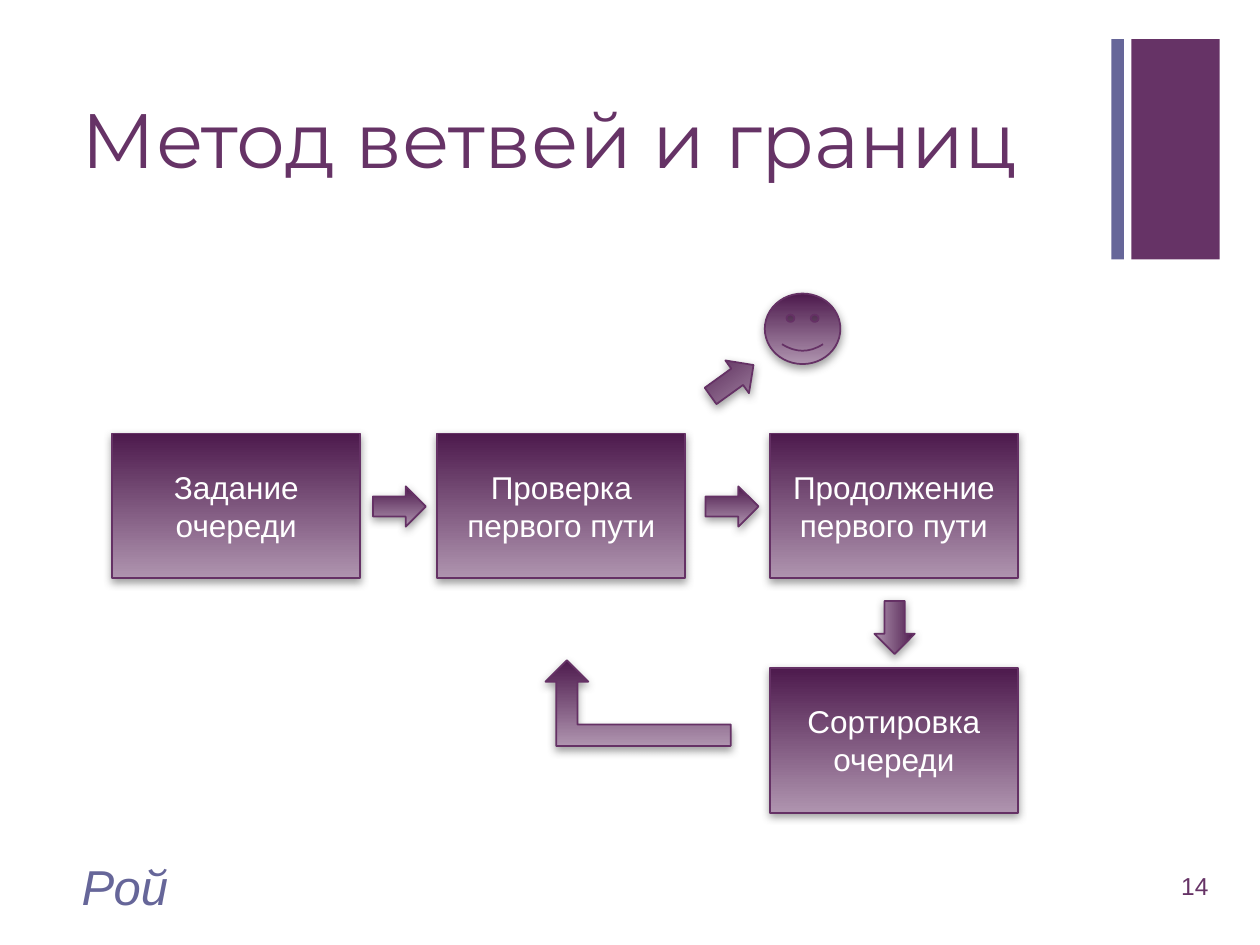
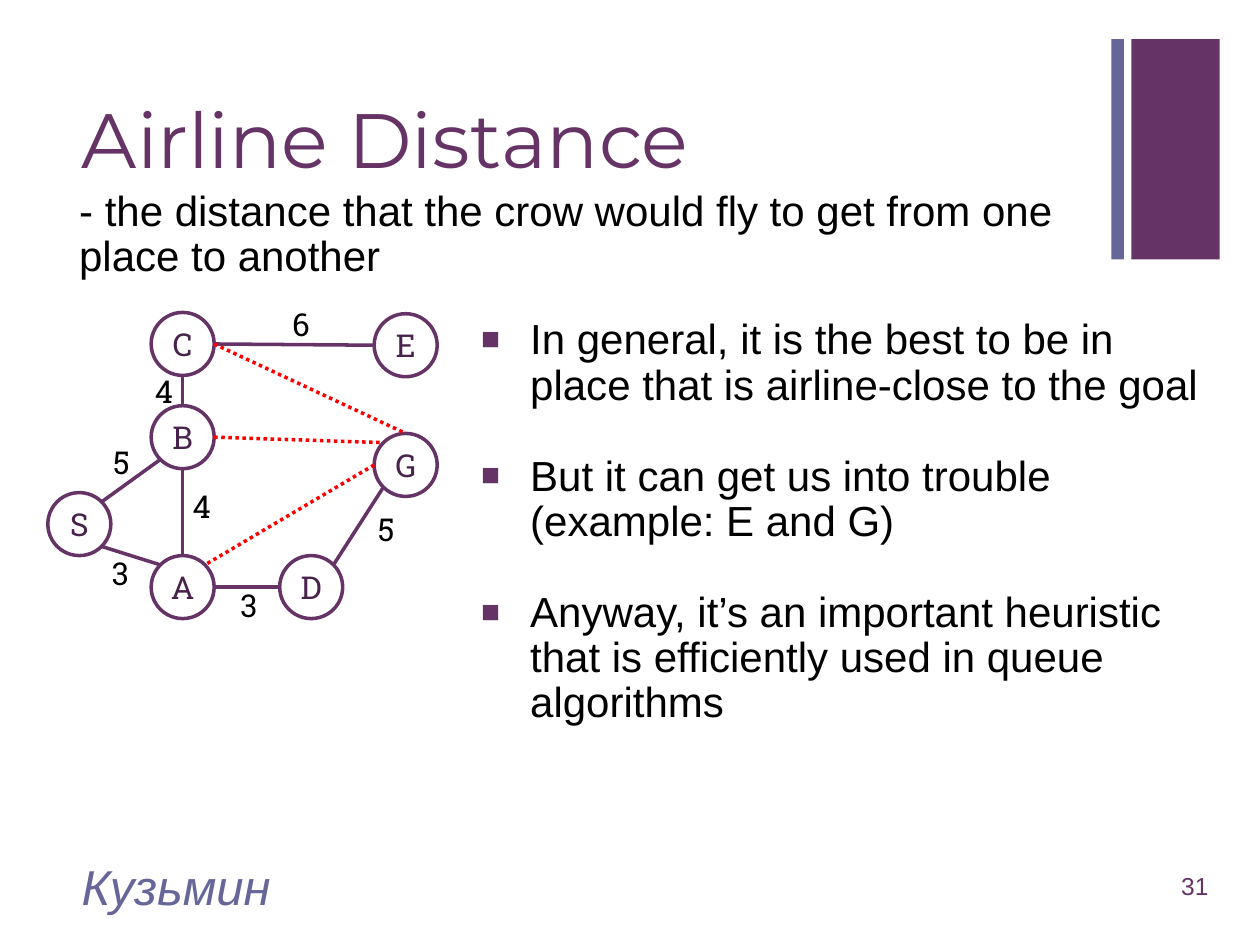
import math

import pptx
import pptx.dml.color
import pptx.enum.dml
import pptx.enum.shapes
import pptx.enum.text
import pptx.oxml
import pptx.oxml.ns
import pptx.util

Inches, Pt = pptx.util.Inches, pptx.util.Pt
RGBColor = pptx.dml.color.RGBColor
SHAPE = pptx.enum.shapes.MSO_SHAPE
ALIGN = pptx.enum.text.PP_ALIGN
ANCHOR = pptx.enum.text.MSO_ANCHOR
DOTTED = pptx.enum.dml.MSO_LINE.ROUND_DOT
qn = pptx.oxml.ns.qn

PURPLE = RGBColor(0x66, 0x33, 0x66)
SLATE = RGBColor(0x66, 0x66, 0x99)
GRADIENT_TOP = RGBColor(0x4D, 0x1A, 0x4D)
GRADIENT_BOTTOM = RGBColor(0xAF, 0x94, 0xAF)
OUTLINE = RGBColor(0x65, 0x31, 0x65)
NODE_TEXT = RGBColor(0x48, 0x22, 0x4C)
WHITE = RGBColor(0xFF, 0xFF, 0xFF)
BLACK = RGBColor(0, 0, 0)
RED = RGBColor(0xFF, 0, 0)

BODY_FONT, TITLE_FONT, GRAPH_FONT = "Arial", "Montserrat", "Roboto Slab"

BOX_SIZE = (1.97, 1.15)
ARROW_SIZE = (0.42, 0.32)
NODE_DIAMETER = 0.5

NODES = {
    "C": (1.2, 2.48), "E": (2.97, 2.49), "B": (1.2, 3.22), "S": (0.38, 3.91),
    "A": (1.2, 4.41), "D": (2.22, 4.41), "G": (2.97, 3.44),
}
# Directions on a node's rim, in degrees clockwise from the right
RIGHT, LOWER_RIGHT, BOTTOM, LOWER_LEFT, LEFT, UPPER_LEFT, TOP, UPPER_RIGHT = range(0, 360, 45)
ROADS = [
    ("E", LEFT, "C", RIGHT), ("C", BOTTOM, "B", TOP),
    ("B", LOWER_LEFT, "S", UPPER_RIGHT), ("S", LOWER_RIGHT, "A", UPPER_LEFT),
    ("B", BOTTOM, "A", TOP), ("A", RIGHT, "D", LEFT),
    ("D", UPPER_RIGHT, "G", LOWER_LEFT),
]
AIRLINES = [
    ("B", RIGHT, "G", UPPER_LEFT), ("C", RIGHT, "G", TOP),
    ("G", LEFT, "A", UPPER_RIGHT),
]
ROAD_LENGTHS = [
    ("6", 2.22, 2.37), ("4", 1.13, 2.9), ("5", 0.8, 3.47), ("3", 0.79, 4.35),
    ("3", 1.81, 4.6), ("5", 2.9, 4), ("4", 1.43, 3.82),
]


def write(frame, *paragraphs, size, color, font=BODY_FONT, align=ALIGN.LEFT,
          anchor=ANCHOR.TOP, italic=False, line_spacing=None, gap=0, bullet=None):
    """Fill a text frame; gap is the space in points between paragraphs."""
    frame.word_wrap = True
    frame.auto_size = pptx.enum.text.MSO_AUTO_SIZE.NONE
    frame.vertical_anchor = anchor
    for index, text in enumerate(paragraphs):
        paragraph = frame.add_paragraph() if index else frame.paragraphs[0]
        paragraph.alignment = align
        if line_spacing:
            paragraph.line_spacing = line_spacing
        if index and gap:
            paragraph.space_before = Pt(gap)
        if bullet:
            add_bullet(paragraph, bullet)
        run = paragraph.add_run()
        run.text = text
        run.font.name, run.font.size, run.font.italic = font, Pt(size), italic
        run.font.color.rgb = color


def add_bullet(paragraph, character, indent=0.39):
    properties = paragraph._p.get_or_add_pPr()
    properties.set("marL", str(Inches(indent)))
    properties.set("indent", str(-Inches(indent)))
    color = properties.makeelement(qn("a:buClr"), {})
    color.append(color.makeelement(qn("a:srgbClr"), {"val": str(PURPLE)}))
    properties.append(color)
    for tag, name, value in [("a:buSzPct", "val", "75000"),
                             ("a:buFont", "typeface", BODY_FONT),
                             ("a:buChar", "char", character)]:
        properties.append(properties.makeelement(qn(tag), {name: value}))


def add_text(slide, text, left, top, width, height, **style):
    box = slide.shapes.add_textbox(*map(Inches, (left, top, width, height)))
    paragraphs = [text] if isinstance(text, str) else text
    write(box.text_frame, *paragraphs, **style)


def add_flat(slide, kind, left, top, width, height, fill, line=None):
    shape = slide.shapes.add_shape(kind, *map(Inches, (left, top, width, height)))
    shape.shadow.inherit = False
    shape.fill.solid()
    shape.fill.fore_color.rgb = fill
    if line is None:
        shape.line.fill.background()
    else:
        shape.line.color.rgb, shape.line.width = line, Pt(2)
    return shape


def add_glossy(slide, kind, left, top, size, rotation=0, flip=False):
    """Add a shape with the purple gradient and a soft shadow below it."""
    shape = slide.shapes.add_shape(kind, *map(Inches, (left, top, *size)))
    shape.rotation = rotation
    shape.fill.gradient()
    shape.fill.gradient_angle = 270
    for stop, color in zip(shape.fill.gradient_stops, (GRADIENT_TOP, GRADIENT_BOTTOM)):
        stop.color.rgb = color
    shape.line.color.rgb, shape.line.width = OUTLINE, Pt(1)
    shape.shadow.inherit = False
    properties = shape.element.spPr
    properties.find(qn("a:effectLst")).append(pptx.oxml.parse_xml(
        f'<a:outerShdw {pptx.oxml.ns.nsdecls("a")} blurRad="{Pt(5)}" dist="{Pt(2)}" '
        'dir="5400000" rotWithShape="0"><a:srgbClr val="808080">'
        '<a:alpha val="75000"/></a:srgbClr></a:outerShdw>'))
    if flip:
        properties.find(qn("a:xfrm")).set("flipH", "1")
    return shape


def add_step(slide, text, left, top):
    box = add_glossy(slide, SHAPE.RECTANGLE, left, top, BOX_SIZE)
    write(box.text_frame, text, size=18, color=WHITE, align=ALIGN.CENTER,
          anchor=ANCHOR.MIDDLE)


def add_node(slide, letter, left, top):
    node = add_flat(slide, SHAPE.OVAL, left, top, NODE_DIAMETER, NODE_DIAMETER,
                    WHITE, line=PURPLE)
    frame = node.text_frame
    frame.margin_left = frame.margin_right = frame.margin_top = frame.margin_bottom = 0
    write(frame, letter, size=18, color=NODE_TEXT, font=GRAPH_FONT,
          align=ALIGN.CENTER, anchor=ANCHOR.MIDDLE)


def rim_point(node, direction):
    radius, angle = NODE_DIAMETER / 2, math.radians(direction)
    left, top = NODES[node]
    return (Inches(left + radius * (1 + math.cos(angle))),
            Inches(top + radius * (1 + math.sin(angle))))


def add_edge(slide, start, start_side, end, end_side, color, dash=None):
    edge = slide.shapes.add_connector(
        pptx.enum.shapes.MSO_CONNECTOR.STRAIGHT,
        *rim_point(start, start_side), *rim_point(end, end_side))
    edge.line.color.rgb, edge.line.width = color, Pt(2)
    if dash:
        edge.line.dash_style = dash
    properties = edge.element.spPr
    properties.append(properties.makeelement(qn("a:effectLst"), {}))


def add_page(deck, title, author, number):
    """Add a slide with the shared bands, title, author and page number."""
    slide = deck.slides.add_slide(deck.slide_layouts[5])
    add_flat(slide, SHAPE.RECTANGLE, 8.98, 0.31, 0.7, 1.75, PURPLE)
    add_flat(slide, SHAPE.RECTANGLE, 8.82, 0.31, 0.1, 1.75, SLATE)
    heading = slide.shapes.title
    heading.left, heading.top = Inches(0.55), Inches(0.53)
    heading.width, heading.height = Inches(8.26), Inches(1.22)
    write(heading.text_frame, title, size=44, color=PURPLE, font=TITLE_FONT,
          anchor=ANCHOR.MIDDLE, line_spacing=0.9)
    add_text(slide, author, 0.55, 6.83, 6.7, 0.4, size=28, color=SLATE,
             italic=True, anchor=ANCHOR.MIDDLE)
    add_text(slide, str(number), 9.08, 6.83, 0.61, 0.4, size=14, color=PURPLE,
             align=ALIGN.RIGHT, anchor=ANCHOR.MIDDLE)
    return slide


def build_branch_and_bound(deck):
    slide = add_page(deck, "Метод ветвей и границ", "Рой", 14)
    for text, left, top in [("Задание очереди", 0.89, 3.44),
                            ("Проверка первого пути", 3.47, 3.44),
                            ("Продолжение первого пути", 6.11, 3.44),
                            ("Сортировка очереди", 6.11, 5.3)]:
        add_step(slide, text, left, top)
    for left, top, rotation in [(2.96, 3.86, 0), (5.6, 3.86, 0),
                                (5.6, 2.86, 324.2), (6.89, 4.82, 90)]:
        add_glossy(slide, SHAPE.RIGHT_ARROW, left, top, ARROW_SIZE, rotation)
    add_glossy(slide, SHAPE.SMILEY_FACE, 6.07, 2.33, (0.6, 0.56))
    add_glossy(slide, SHAPE.BENT_UP_ARROW, 4.33, 5.24, (1.47, 0.68), flip=True)


def build_airline_distance(deck):
    slide = add_page(deck, "Airline Distance", "Кузьмин", 31)
    add_text(slide, [
        "In general, it is the best to be in place that is airline-close to the goal",
        "But it can get us into trouble (example: E and G)",
        "Anyway, it’s an important heuristic that is efficiently used in queue algorithms",
    ], 3.72, 2.48, 5.96, 4.53, size=24, color=BLACK, line_spacing=0.9, gap=26, bullet="■")
    for letter, (left, top) in NODES.items():
        add_node(slide, letter, left, top)
    for road in ROADS:
        add_edge(slide, *road, color=PURPLE)
    for airline in AIRLINES:
        add_edge(slide, *airline, color=RED, dash=DOTTED)
    for length, left, top in ROAD_LENGTHS:
        add_text(slide, length, left, top, 0.39, 0.4, size=18, color=BLACK, font=GRAPH_FONT)
    add_text(slide, "- the distance that the crow would fly to get from one place to another",
             0.53, 1.46, 8.4, 0.87, size=24, color=BLACK, line_spacing=0.9)


def main():
    deck = pptx.Presentation()
    deck.slide_width, deck.slide_height = Inches(10), Inches(7.5)
    build_branch_and_bound(deck)
    build_airline_distance(deck)
    deck.save("out.pptx")


if __name__ == "__main__":
    main()
